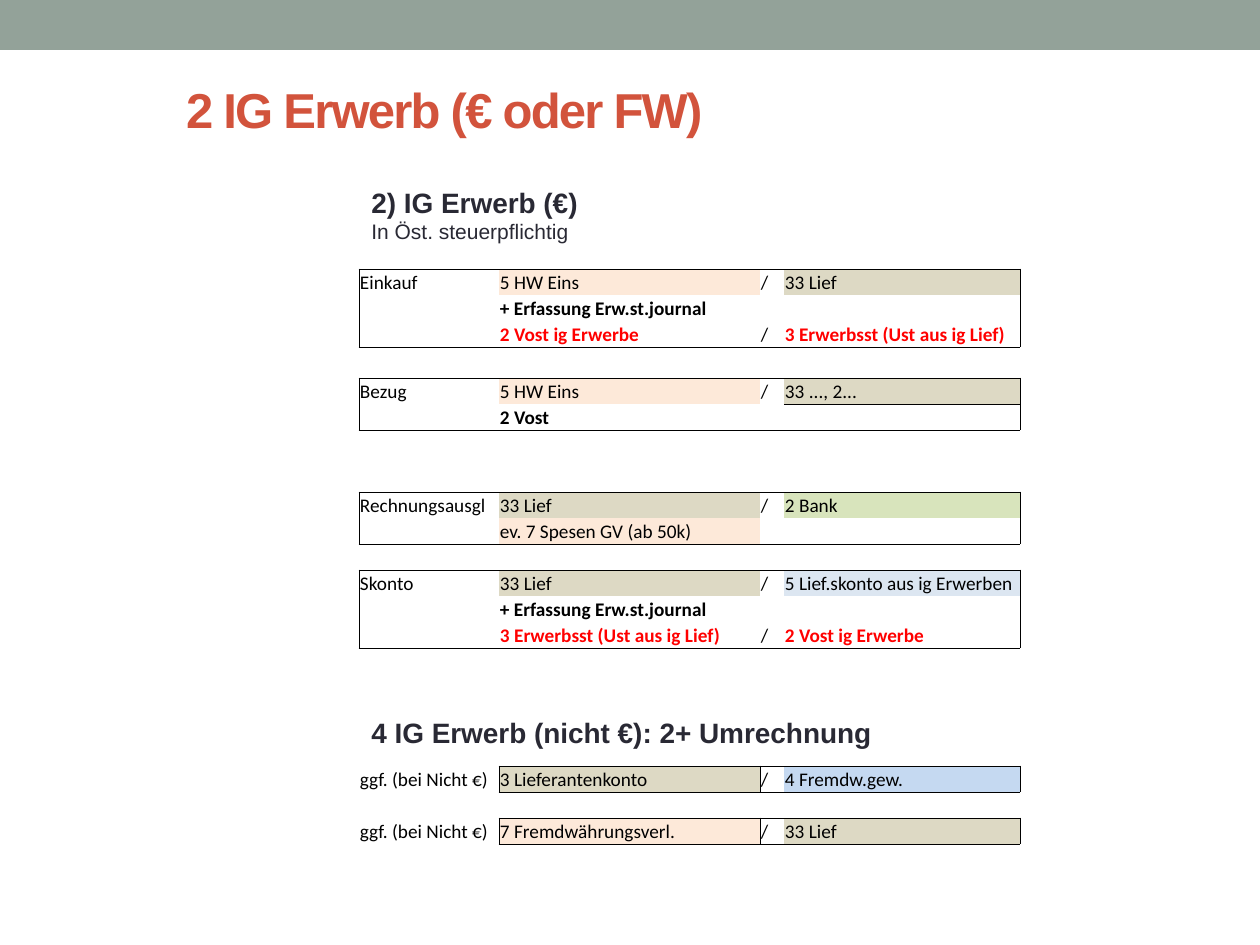
import pptx
import pptx.util
import pptx.dml.color
import pptx.enum.shapes
import pptx.enum.text
import pptx.oxml
from dataclasses import dataclass
from lxml import etree

PX_PER_INCH = 126
NO_TABLE_STYLE = "{2D5ABB26-0587-4C30-8999-92F81FD0307C}"
COLUMNS = (140, 261, 24, 236)
ROW_HEIGHT = 26
BLOCK_LEFT = 359


@dataclass(frozen=True)
class Theme:
    heading_font: str = "Arial"
    table_font: str = "Calibri"
    title_size: int = 28
    heading_size: int = 16
    note_size: int = 12
    table_size: int = 11
    bar: str = "93A299"
    title: str = "D2533C"
    text: str = "292934"
    black: str = "000000"
    red: str = "FF0000"
    expense: str = "FDE9D9"
    supplier: str = "DDD9C4"
    bank: str = "D8E4BC"
    discount: str = "DCE6F1"
    gain: str = "C5D9F1"


THEME = Theme()


@dataclass(frozen=True)
class Entry:
    text: str = ""
    fill: str = ""
    color: str = THEME.black
    bold: bool = False


def px(n):
    return pptx.util.Emu(round(n * 914400 / PX_PER_INCH))


def rgb(value):
    return pptx.dml.color.RGBColor.from_string(value)


def set_font(font, name, size, color, bold=False):
    font.name, font.size, font.bold = name, pptx.util.Pt(size), bold
    font.color.rgb = rgb(color)


def add_bar(slide, x, y, w, h):
    sp = slide.shapes.add_shape(
        pptx.enum.shapes.MSO_SHAPE.RECTANGLE, px(x), px(y), px(w), px(h))
    sp.shadow.inherit = False
    sp.fill.solid()
    sp.fill.fore_color.rgb = rgb(THEME.bar)
    sp.line.fill.background()


def place_title(slide, text, x, y, w, h, indent):
    sp = slide.shapes.title
    sp.left, sp.top, sp.width, sp.height = px(x), px(y), px(w), px(h)
    tf = sp.text_frame
    tf.margin_left = px(indent)
    tf.vertical_anchor = pptx.enum.text.MSO_ANCHOR.MIDDLE
    p = tf.paragraphs[0]
    p.alignment = pptx.enum.text.PP_ALIGN.LEFT
    r = p.add_run()
    r.text = text
    set_font(r.font, THEME.heading_font, THEME.title_size, THEME.title, True)
    r.font._element.set("spc", "-100")


def add_heading(slide, x, y, w, h, heading, note=""):
    tf = slide.shapes.add_textbox(px(x), px(y), px(w), px(h)).text_frame
    tf.word_wrap = False
    p = tf.paragraphs[0]
    p.text = heading
    set_font(p.font, THEME.heading_font, THEME.heading_size, THEME.text, True)
    if note:
        p = tf.add_paragraph()
        p.text = note
        set_font(p.font, THEME.heading_font, THEME.note_size, THEME.text)


def add_borders(cell, sides):
    """Draw thin black lines on the sides named by letters of LRTB."""
    tc_pr = cell._tc.get_or_add_tcPr()
    for side in "LRTB":
        if side in sides:
            ln = etree.SubElement(tc_pr, pptx.oxml.ns.qn("a:ln" + side), w="6350")
            fill = etree.SubElement(ln, pptx.oxml.ns.qn("a:solidFill"))
            etree.SubElement(fill, pptx.oxml.ns.qn("a:srgbClr"), val=THEME.black)


def frame_sides(row, col, frame):
    """Sides of a cell that lie on a frame given as first row, last row, first column."""
    top, bottom, left = frame
    if not (top <= row <= bottom and col >= left):
        return ""
    edges = {"L": col == left, "R": col == len(COLUMNS) - 1,
             "T": row == top, "B": row == bottom}
    return "".join(side for side, on_edge in edges.items() if on_edge)


def fill_cell(cell, entry, sides):
    add_borders(cell, sides)
    if entry.fill:
        cell.fill.solid()
        cell.fill.fore_color.rgb = rgb(entry.fill)
    else:
        cell.fill.background()
    cell.margin_left = cell.margin_right = cell.margin_top = px(1)
    cell.margin_bottom = 0
    cell.vertical_anchor = pptx.enum.text.MSO_ANCHOR.BOTTOM
    p = cell.text_frame.paragraphs[0]
    p.text = entry.text
    set_font(p.font, THEME.table_font, THEME.table_size, entry.color, entry.bold)
    if not entry.text:
        p._p.get_or_add_endParaRPr().set("sz", str(THEME.table_size * 100))


def add_postings(slide, x, y, rows, frames, underlined=()):
    """Add a table of postings: label, debit, slash, credit."""
    table = slide.shapes.add_table(
        len(rows), len(COLUMNS), px(x), px(y),
        px(sum(COLUMNS)), px(ROW_HEIGHT * len(rows))).table
    table.first_row = table.horz_banding = False
    table._tbl.tblPr.find(pptx.oxml.ns.qn("a:tableStyleId")).text = NO_TABLE_STYLE
    for column, width in zip(table.columns, COLUMNS):
        column.width = px(width)
    for i, (label, debit, credit) in enumerate(rows):
        table.rows[i].height = px(ROW_HEIGHT)
        slash = Entry("/" if credit.text else "")
        for j, entry in enumerate((Entry(label), debit, slash, credit)):
            sides = "".join(frame_sides(i, j, frame) for frame in frames)
            if (i, j) in underlined:
                sides += "B"
            fill_cell(table.cell(i, j), entry, sides)


def main():
    prs = pptx.Presentation()
    prs.slide_width, prs.slide_height = px(1260), px(945)
    slide = prs.slides.add_slide(prs.slide_layouts[5])

    add_bar(slide, 0, 0, 1260, 50)
    place_title(slide, "2 IG Erwerb (€ oder FW)", 0, 63, 1228, 91, indent=186)

    empty = Entry()
    goods = Entry("5 HW Eins", THEME.expense)
    supplier = Entry("33 Lief", THEME.supplier)
    journal = Entry("+ Erfassung Erw.st.journal", bold=True)
    input_tax = Entry("2 Vost ig Erwerbe", color=THEME.red, bold=True)
    purchase_tax = Entry("3 Erwerbsst (Ust aus ig Lief)", color=THEME.red, bold=True)
    discount = Entry("5 Lief.skonto aus ig Erwerben", THEME.discount)
    foreign = "ggf. (bei Nicht €)"

    add_postings(slide, BLOCK_LEFT, 269, [
        ("Einkauf", goods, supplier),
        ("", journal, empty),
        ("", input_tax, purchase_tax)], [(0, 2, 0)])
    add_postings(slide, BLOCK_LEFT, 378, [
        ("Bezug", goods, Entry("33 ..., 2...", THEME.supplier)),
        ("", Entry("2 Vost", bold=True), empty)], [(0, 1, 0)], underlined=[(0, 3)])
    add_postings(slide, BLOCK_LEFT, 492, [
        ("Rechnungsausgl", supplier, Entry("2 Bank", THEME.bank)),
        ("", Entry("ev. 7 Spesen GV (ab 50k)", THEME.expense), empty)], [(0, 1, 0)])
    add_postings(slide, BLOCK_LEFT, 570, [
        ("Skonto", supplier, discount),
        ("", journal, empty),
        ("", purchase_tax, input_tax)], [(0, 2, 0)])
    add_postings(slide, BLOCK_LEFT, 766, [
        (foreign, Entry("3 Lieferantenkonto", THEME.supplier),
         Entry("4 Fremdw.gew.", THEME.gain)),
        ("", empty, empty),
        (foreign, Entry("7 Fremdwährungsverl.", THEME.expense), supplier)],
        [(0, 0, 1), (2, 2, 1)])

    add_heading(slide, BLOCK_LEFT, 179, 234, 72,
                "2) IG Erwerb (€)", "In Öst. steuerpflichtig")
    add_heading(slide, BLOCK_LEFT, 709, 532, 47, "4 IG Erwerb (nicht €): 2+ Umrechnung")
    prs.save("out.pptx")


if __name__ == "__main__":
    main()
